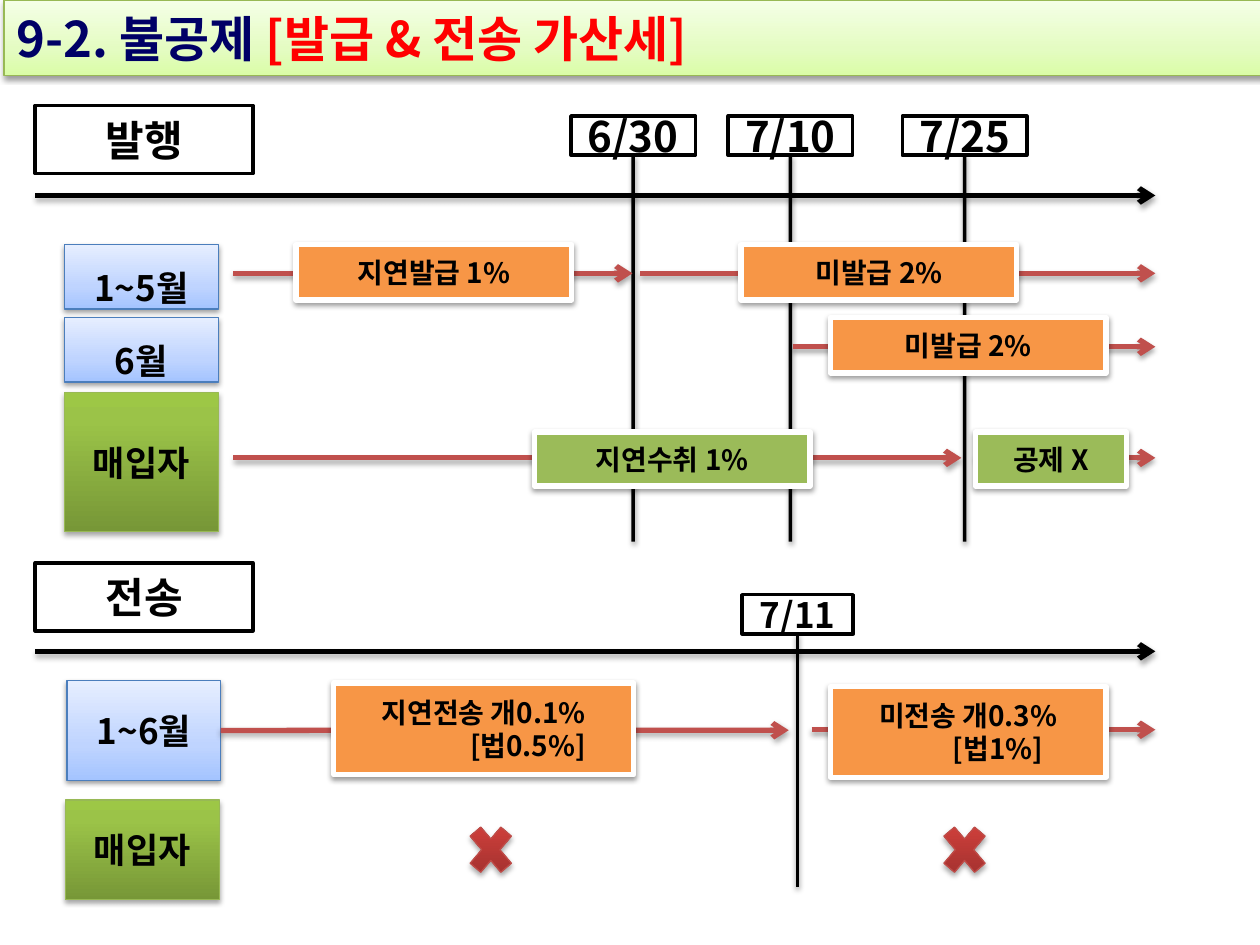
from copy import deepcopy
from dataclasses import dataclass

from lxml.etree import SubElement
from pptx import Presentation
from pptx.dml.color import RGBColor
from pptx.enum.shapes import MSO_CONNECTOR, MSO_SHAPE
from pptx.enum.text import MSO_ANCHOR, PP_ALIGN
from pptx.oxml.ns import qn
from pptx.util import Cm, Pt

FONT = "Noto Sans CJK KR"
BLACK, WHITE, RED = "000000", "FFFFFF", "C0504D"
AXIS_START, AXIS_END = 0.71, 23.29
BOTTOM, RIGHT = 2, 3


@dataclass(frozen=True)
class Style:
    fill: str | tuple[tuple[float, str], ...]
    border: str
    border_width: float
    size: int = 16
    shadow: tuple[int, float] | None = (38, 1.6)
    line_spacing: float = 1.0


@dataclass(frozen=True)
class Box:
    text: str
    left: float
    top: float
    width: float
    height: float
    style: Style
    second_line: str = ""
    second_indent: float = 0


@dataclass(frozen=True)
class Arrow:
    start: float
    end: float
    height: float
    color: str = RED


BLUE = ((0, "A4C4FF"), (0.35, "BFD4FF"), (1, "E6EEFF"))
GREEN = ((0, "779737"), (0.8, "9BC348"), (1, "9DC746"))
CRIMSON = ((0, "9C2F2D"), (0.8, "CB3E3A"), (1, "CE3B37"))
LIME = ((0, "DAFDA7"), (0.35, "E4FCC2"), (1, "F5FFE7"))

TITLE = Style(LIME, "98B955", 0.75, 28)
HEADING = Style(WHITE, BLACK, 2, 24, None)
SMALL_DATE = Style(WHITE, BLACK, 2, 20, None)
MONTH = Style(BLUE, "4B7EBC", 0.75, 20)
SPACED_MONTH = Style(BLUE, "4B7EBC", 0.75, 20, line_spacing=1.5)
BUYER = Style(GREEN, "98B955", 0.75, 20, (35, 1.8))
PENALTY = Style("F79646", WHITE, 3)
RECEIPT = Style("9BBB59", WHITE, 3)
CROSS = Style(CRIMSON, "BF4C48", 0.75, shadow=(35, 1.8))

DATES = [
    (Box(text, left, 2.34, 2.51, 0.79, HEADING), 10.92)
    for text, left in (("6/30", 11.51), ("7/10", 14.68), ("7/25", 18.19))
] + [(Box("7/11", 14.96, 11.99, 2.24, 0.79, SMALL_DATE), 17.88)]

ARROWS = [
    Arrow(AXIS_START, AXIS_END, 3.94, BLACK),
    Arrow(AXIS_START, AXIS_END, 13.13, BLACK),
    Arrow(4.7, 12.75, 5.51),
    Arrow(12.9, AXIS_END, 5.51),
    Arrow(15.98, AXIS_END, 6.99),
    Arrow(4.7, 19.38, 9.23),
    Arrow(19.66, AXIS_END, 9.23),
    Arrow(16.36, AXIS_END, 14.71),
]

SENDING_MONTHS = Box("1~6월", 1.35, 13.72, 3.1, 2.01, MONTH)
BOXES = [
    Box("발행", AXIS_START, 2.13, 4.39, 1.37, HEADING),
    Box("전송", AXIS_START, 11.35, 4.39, 1.37, HEADING),
    Box("1~5월", 1.3, 4.93, 3.1, 1.3, SPACED_MONTH),
    Box("6월", 1.3, 6.4, 3.1, 1.3, SPACED_MONTH),
    Box("매입자", 1.3, 7.92, 3.1, 2.79, BUYER),
    Box("매입자", 1.32, 16.13, 3.1, 2.01, BUYER),
    Box("지연발급 1%", 5.97, 4.93, 5.56, 1.12, PENALTY),
    Box("미발급 2%", 14.94, 4.93, 5.56, 1.12, PENALTY),
    Box("미발급 2%", 16.74, 6.4, 5.56, 1.12, PENALTY),
    Box("지연수취 1%", 10.77, 8.71, 5.56, 1.09, RECEIPT),
    Box("공제 X", 19.66, 8.71, 3.05, 1.09, RECEIPT),
    Box("지연전송 개0.1%", 6.73, 13.77, 6.05, 1.85, PENALTY, "[법0.5%]", 1.78),
    Box("미전송 개0.3%", 16.74, 13.84, 5.56, 1.83, PENALTY, "[법1%]", 1.2),
]


def rgb(color: str) -> RGBColor:
    return RGBColor.from_string(color)


def add_shadow(effects, opacity: int, distance: float) -> None:
    shadow = SubElement(effects, qn("a:outerShdw"), blurRad=str(Pt(3.1)),
                        dist=str(Pt(distance)), dir="5400000", rotWithShape="0")
    color = SubElement(shadow, qn("a:srgbClr"), val=BLACK)
    SubElement(color, qn("a:alpha"), val=str(opacity * 1000))


def paint(shape, style: Style) -> None:
    if isinstance(style.fill, str):
        shape.fill.solid()
        shape.fill.fore_color.rgb = rgb(style.fill)
    else:
        shape.fill.gradient()
        shape.fill.gradient_angle = 90
        stops = shape._element.spPr.find(".//" + qn("a:gsLst"))
        stops.append(deepcopy(stops[-1]))
        for stop, (position, color) in zip(shape.fill.gradient_stops, style.fill):
            stop.position = position
            stop.color.rgb = rgb(color)
    shape.line.color.rgb = rgb(style.border)
    shape.line.width = Pt(style.border_width)
    shape.shadow.inherit = False
    if style.shadow:
        add_shadow(shape._element.spPr.find(qn("a:effectLst")), *style.shadow)


def format_paragraph(para, style: Style, alignment) -> None:
    para.alignment = alignment
    para.line_spacing = style.line_spacing
    para.font.name = FONT
    para.font.size = Pt(style.size)
    para.font.bold = True
    para.font.color.rgb = rgb(BLACK)
    latin = para.font._element.find(qn("a:latin"))
    east_asian = deepcopy(latin)
    east_asian.tag = qn("a:ea")
    latin.addnext(east_asian)


def add_box(slide, box: Box, preset=MSO_SHAPE.RECTANGLE):
    shape = slide.shapes.add_shape(
        preset, Cm(box.left), Cm(box.top), Cm(box.width), Cm(box.height))
    paint(shape, box.style)
    frame = shape.text_frame
    frame.vertical_anchor = MSO_ANCHOR.MIDDLE
    if box.text:
        frame.text = box.text
        format_paragraph(frame.paragraphs[0], box.style, PP_ALIGN.CENTER)
    if box.second_line:
        para = frame.add_paragraph()
        para.text = box.second_line
        format_paragraph(para, box.style, PP_ALIGN.CENTER)
        para._p.pPr.set("marL", str(Cm(box.second_indent)))
    return shape


def add_line(slide, start: tuple, end: tuple, color: str, arrow: bool):
    line = slide.shapes.add_connector(
        MSO_CONNECTOR.STRAIGHT, *(Cm(value) for value in (*start, *end)))
    line.line.color.rgb = rgb(color)
    line.line.width = Pt(3 if arrow else 2)
    properties = line._element.spPr
    if arrow:
        SubElement(properties.find(qn("a:ln")), qn("a:tailEnd"), type="arrow")
    effects = SubElement(properties, qn("a:effectLst"))
    add_shadow(effects, *((35, 1.8) if arrow else (38, 1.6)))
    return line


def add_title(slide) -> None:
    title = slide.shapes.title
    title.left, title.top, title.width, title.height = Cm(0.08), Cm(0), Cm(25.4), Cm(1.52)
    paint(title, TITLE)
    title.text_frame.vertical_anchor = MSO_ANCHOR.MIDDLE
    para = title.text_frame.paragraphs[0]
    format_paragraph(para, TITLE, PP_ALIGN.LEFT)
    for text, color in (("9-2. 불공제 ", "000066"), ("[발급 & 전송 가산세]", "FF0000")):
        span = para.add_run()
        span.text = text
        span.font.color.rgb = rgb(color)


def main() -> None:
    deck = Presentation()
    deck.slide_width, deck.slide_height = Cm(25.4), Cm(19.05)
    page = deck.slides.add_slide(deck.slide_layouts[5])
    add_title(page)
    for date, foot in DATES:
        middle = date.left + date.width / 2
        marker = add_box(page, date)
        line = add_line(page, (middle, date.top + date.height), (middle, foot), BLACK, False)
        line.begin_connect(marker, BOTTOM)
    for arrow in ARROWS:
        add_line(page, (arrow.start, arrow.height), (arrow.end, arrow.height), arrow.color, True)
    months = add_box(page, SENDING_MONTHS)
    add_line(page, (4.45, 14.72), (15.9, 14.72), RED, True).begin_connect(months, RIGHT)
    for box in BOXES:
        add_box(page, box)
    for left in (9.3, 18.85):
        add_box(page, Box("", left, 16.43, 1.19, 1.4, CROSS), MSO_SHAPE.MATH_MULTIPLY)
    deck.save("out.pptx")


if __name__ == "__main__":
    main()
